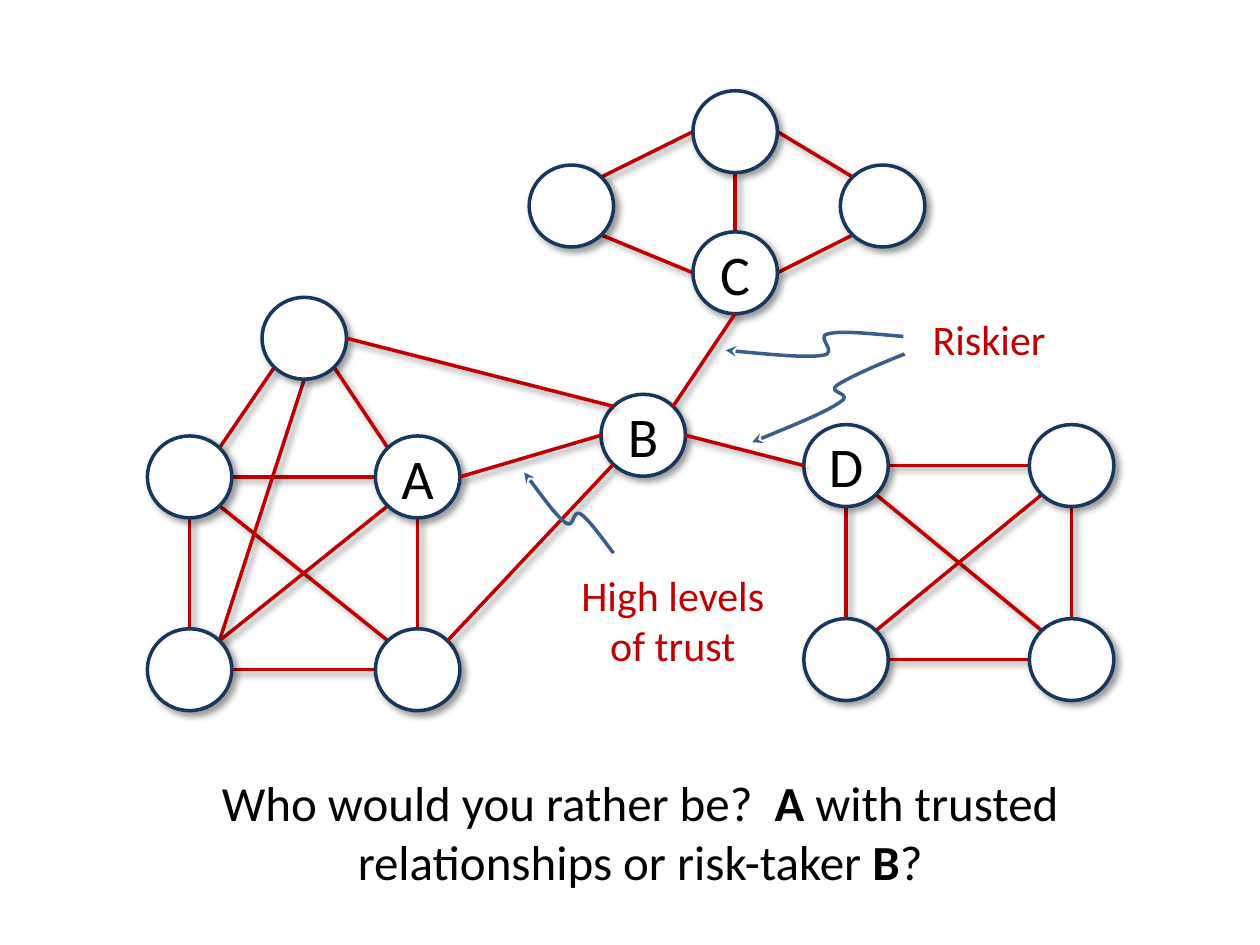
from collections import namedtuple
from dataclasses import dataclass
from math import cos, radians, sin

from lxml.etree import SubElement
from pptx import Presentation
from pptx.dml.color import RGBColor
from pptx.enum.shapes import MSO_CONNECTOR as Connector, MSO_SHAPE as Shape
from pptx.enum.text import MSO_ANCHOR as Anchor, PP_ALIGN as Align
from pptx.oxml import parse_xml
from pptx.oxml.ns import nsdecls, qn
from pptx.util import Inches, Pt

Box = namedtuple("Box", "left top width height")


@dataclass(frozen=True)
class Theme:
    """Colours, type sizes and line measures of the slide."""
    font: str = "Calibri"
    ink: str = "000000"
    paper: str = "FFFFFF"
    rim: str = "17375E"
    tie: str = "C00000"
    pointer: str = "3A5F8C"
    letter_size: int = 32
    question_size: int = 28
    note_size: int = 24
    stroke: int = 2
    node_width: float = 0.67
    node_height: float = 0.65


THEME = Theme()
SITES = {name: radians(45 * step) for step, name in
         enumerate(("E", "SE", "S", "SW", "W", "NW", "N", "NE"))}

CLIQUE = {"Peak": (0.91, 0), "Left": (0, 1.1), "A": (1.81, 1.1),
          "Low left": (0, 2.63), "Low right": (1.81, 2.63)}
CLIQUE_TIES = [
    ("Low right", "NW", "Left", "SE"), ("Low right", "W", "Low left", "E"),
    ("Low right", "N", "A", "S"), ("A", "W", "Left", "E"),
    ("Low left", "N", "Left", "S"), ("Low left", "NE", "A", "SW"),
    ("Peak", "SW", "Left", "NE"), ("A", "NW", "Peak", "SE"),
    ("Low left", "NE", "Peak", "S")]
DIAMOND = {"Crown": (1.3, 0), "C": (1.3, 1.12),
           "West": (0, 0.59), "East": (2.47, 0.59)}
DIAMOND_TIES = [
    ("C", "W", "West", "SE"), ("East", "SW", "C", "E"),
    ("Crown", "W", "West", "NE"), ("East", "NW", "Crown", "E"),
    ("C", "N", "Crown", "S")]
SQUARE = {"D": (0, 0), "Upper": (1.79, 0),
          "Under": (0, 1.54), "Corner": (1.79, 1.54)}
SQUARE_TIES = [
    ("Corner", "NW", "D", "SE"), ("Under", "NE", "Upper", "SW"),
    ("Under", "N", "D", "S"), ("Corner", "N", "Upper", "S"),
    ("Upper", "W", "D", "E"), ("Under", "E", "Corner", "W")]
BRIDGES = [
    ("A", "E", "B", "W"), ("B", "NE", "C", "S"), ("D", "W", "B", "E"),
    ("B", "NW", "Peak", "E"), ("Low right", "NE", "B", "SW")]

TRUST_CURVE = [
    (0.44, -0.08), (0.34, -0.21), (0.24, -0.35), (0.18, -0.39),
    (0.11, -0.43), (0.13, -0.27), (0.06, -0.32),
    (-0.02, -0.38), (-0.14, -0.55), (-0.27, -0.72)]
RISK_CURVES = [
    [(0.23, 0.23), (-0.02, 0.21), (-0.26, 0.18), (-0.37, 0.21),
     (-0.47, 0.23), (-0.28, 0.36), (-0.41, 0.38),
     (-0.55, 0.4), (-0.86, 0.37), (-1.18, 0.34)],
    [(0.24, 0.37), (0.01, 0.46), (-0.21, 0.56), (-0.3, 0.62),
     (-0.38, 0.68), (-0.16, 0.68), (-0.27, 0.75),
     (-0.38, 0.83), (-0.68, 0.95), (-0.97, 1.07)]]


def rgb(colour):
    """Turn a hex string into a colour."""
    return RGBColor.from_string(colour)


def set_line(shape, colour):
    """Give a shape or connector a solid outline."""
    shape.line.color.rgb = rgb(colour)
    shape.line.width = Pt(THEME.stroke)


def add_shadow(shape):
    """Give a shape or connector a soft shadow to the lower right."""
    shape._element.spPr.append(parse_xml(
        f'<a:effectLst {nsdecls("a")}>'
        f'<a:outerShdw blurRad="{Pt(4)}" dist="{Pt(3)}" dir="2700000" '
        'algn="tl" rotWithShape="0"><a:srgbClr val="000000">'
        '<a:alpha val="40000"/></a:srgbClr></a:outerShdw></a:effectLst>'))


def add_span(para, text, size, colour, bold=False):
    """Add formatted text to a paragraph."""
    span = para.add_run()
    span.text = text
    span.font.name = THEME.font
    span.font.size = Pt(size)
    span.font.bold = bold
    span.font.color.rgb = rgb(colour)


def add_text(page, box, lines, size, colour):
    """Place centred lines, each a list of (text, bold) pairs."""
    frame = page.shapes.add_textbox(*map(Inches, box)).text_frame
    frame.word_wrap = True
    for index, line in enumerate(lines):
        para = frame.add_paragraph() if index else frame.paragraphs[0]
        para.alignment = Align.CENTER
        for text, bold in line:
            add_span(para, text, size, colour, bold=bold)


def rim_point(box, site):
    """Find the point on a node's rim at a compass site."""
    angle = SITES[site]
    return (box.left + box.width / 2 * (1 + cos(angle)),
            box.top + box.height / 2 * (1 + sin(angle)))


def draw_ties(page, nodes, ties):
    """Draw the relationship lines between nodes."""
    for start, start_site, end, end_site in ties:
        points = (rim_point(nodes[start], start_site)
                  + rim_point(nodes[end], end_site))
        tie = page.shapes.add_connector(Connector.STRAIGHT, *map(Inches, points))
        set_line(tie, THEME.tie)
        add_shadow(tie)


def draw_node(page, box, letter):
    """Draw one person as a circle, with a letter if it has one."""
    node = page.shapes.add_shape(Shape.OVAL, *map(Inches, box))
    node.fill.solid()
    node.fill.fore_color.rgb = rgb(THEME.paper)
    set_line(node, THEME.rim)
    add_shadow(node)
    if letter:
        frame = node.text_frame
        frame.margin_left = frame.margin_right = 0
        frame.vertical_anchor = Anchor.MIDDLE
        para = frame.paragraphs[0]
        para.alignment = Align.CENTER
        add_span(para, letter, THEME.letter_size, THEME.ink)


def draw_cluster(page, box, offsets, ties=()):
    """Draw a group of nodes and its ties, and return the node boxes."""
    nodes = {name: Box(box.left + x, box.top + y,
                       THEME.node_width, THEME.node_height)
             for name, (x, y) in offsets.items()}
    draw_ties(page, nodes, ties)
    for name, node_box in nodes.items():
        draw_node(page, node_box, name if len(name) == 1 else "")
    return nodes


def draw_pointer(page, box, curve):
    """Draw a curved arrow through Bezier points relative to the box."""
    points = [(Inches(box.left + x), Inches(box.top + y)) for x, y in curve]
    builder = page.shapes.build_freeform(*points[0])
    builder.add_line_segments(points[1:], close=False)
    pointer = builder.convert_to_shape()
    pointer.shadow.inherit = False
    pointer.fill.background()
    set_line(pointer, THEME.pointer)
    SubElement(pointer.line._get_or_add_ln(), qn("a:tailEnd"), type="stealth")
    outline = next(pointer._element.iter(qn("a:path")))
    segments = outline.findall(qn("a:lnTo"))
    for first in range(0, len(segments), 3):
        bezier = SubElement(outline, qn("a:cubicBezTo"))
        for segment in segments[first:first + 3]:
            bezier.append(segment[0])
            outline.remove(segment)


def draw_note(page, box, lines, curves):
    """Place a note and the arrows that lead from it."""
    add_text(page, box, [[(line, False)] for line in lines],
             THEME.note_size, THEME.tie)
    for curve in curves:
        draw_pointer(page, box, curve)


def draw_question(page, box):
    """Place the closing question."""
    add_text(page, box, [[
        ("Who would you rather be?  ", False), ("A", True),
        (" with trusted relationships or risk-taker ", False),
        ("B", True), ("?", False)]], THEME.question_size, THEME.ink)


def main():
    """Build the slide and save it."""
    deck = Presentation()
    deck.slide_width, deck.slide_height = Inches(10), Inches(7.5)
    page = deck.slides.add_slide(deck.slide_layouts[6])
    nodes = {
        **draw_cluster(page, Box(1.17, 2.36, 2.48, 3.28), CLIQUE, CLIQUE_TIES),
        **draw_cluster(page, Box(4.2, 0.72, 3.14, 1.77), DIAMOND, DIAMOND_TIES),
        **draw_cluster(page, Box(6.38, 3.37, 2.46, 2.19), SQUARE, SQUARE_TIES),
        **draw_cluster(page, Box(4.77, 3.13, 0.67, 0.65), {"B": (0, 0)})}
    draw_ties(page, nodes, BRIDGES)
    draw_note(page, Box(4.43, 4.47, 1.82, 0.91),
              ["High levels", "of trust"], [TRUST_CURVE])
    draw_note(page, Box(6.94, 2.44, 1.82, 0.5), ["Riskier"], RISK_CURVES)
    draw_question(page, Box(0.62, 6.08, 8.92, 1.04))
    deck.save("out.pptx")


if __name__ == "__main__":
    main()
